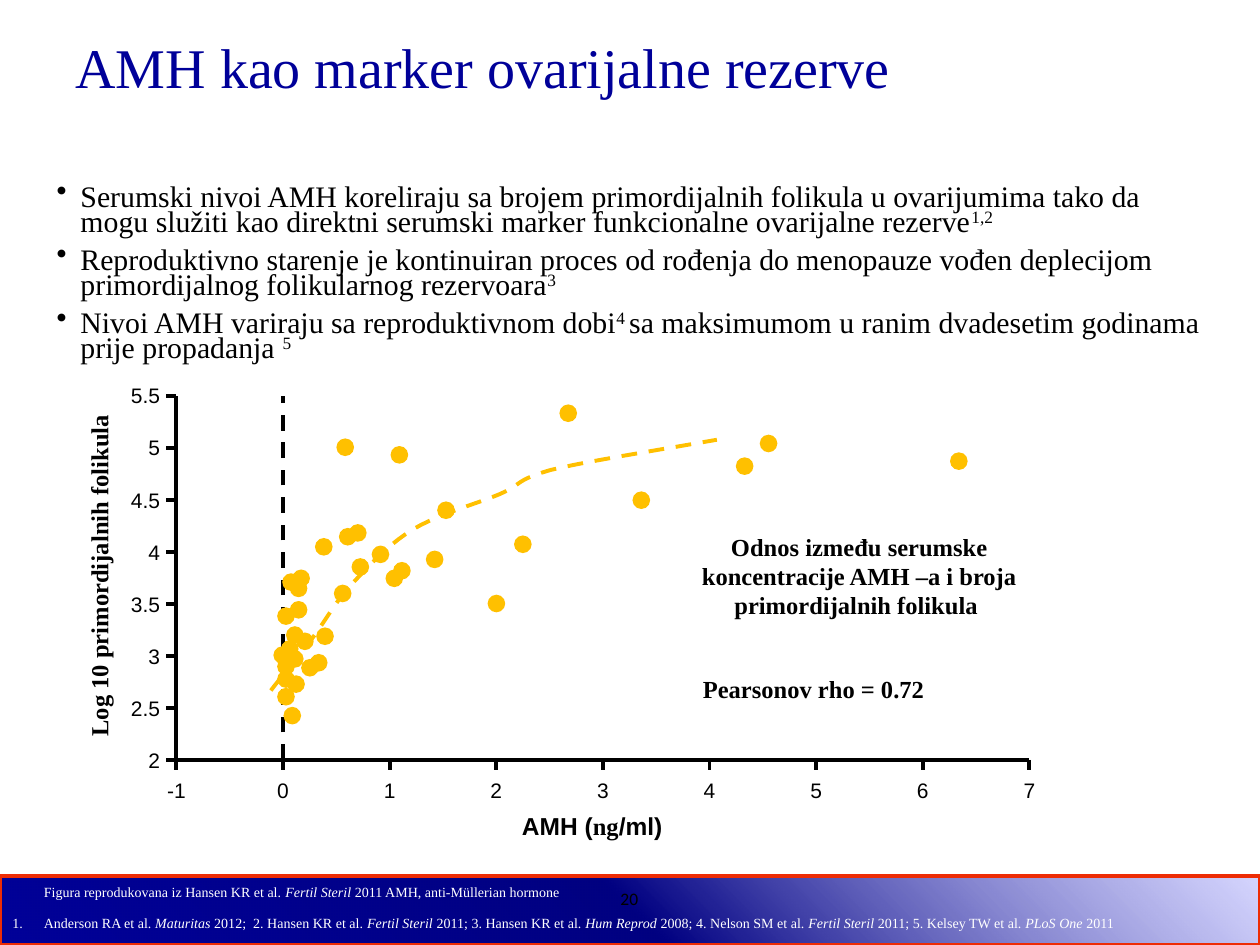
from lxml import etree
from pptx import Presentation
from pptx import util as u
from pptx.dml.color import RGBColor
from pptx.enum import dml, shapes, text
from pptx.oxml import parse_xml
from pptx.oxml.ns import nsdecls, qn

COLORS = {"title": "000099", "ink": "000000", "paper": "FFFFFF", "marker": "FFC000",
          "frame": "ED2C05", "glow": "C4C4FF", "navy": "000081"}
SERIF, SANS = "Times New Roman", "Arial"
LEFT, CENTER, RIGHT = text.PP_ALIGN.LEFT, text.PP_ALIGN.CENTER, text.PP_ALIGN.RIGHT
TOP, MIDDLE, BOTTOM = text.MSO_ANCHOR.TOP, text.MSO_ANCHOR.MIDDLE, text.MSO_ANCHOR.BOTTOM
DEFAULT_INSETS, NO_INSETS, NOTE_INSETS = (0.1, 0.05, 0.1, 0.05), (0, 0, 0, 0), (0.1, 0.05, 0, 0)

AXIS_LEFT, AXIS_BASE, AXIS_TOP = 1.4, 6.03, 3.14
X_STEP, Y_STEP = 6.77 / 8, (AXIS_BASE - AXIS_TOP) / 7
ZERO_X = AXIS_LEFT + X_STEP
TICK, DOT = 0.08, 0.14
LABEL_W, LABEL_H = 0.35, 0.2

FINDINGS = [
    [("Serumski nivoi AMH koreliraju sa brojem primordijalnih folikula u ovarijumima tako da "
      "mogu služiti kao direktni serumski marker funkcionalne ovarijalne rezerve", ""),
     ("1,2", "super")],
    [("Reproduktivno starenje je kontinuiran proces od rođenja do menopauze vođen deplecijom "
      "primordijalnog folikularnog rezervoara", ""), ("3", "super")],
    [("Nivoi AMH variraju sa reproduktivnom dobi", ""), ("4 ", "super"),
     ("sa maksimumom u ranim dvadesetim godinama prije propadanja ", ""), ("5", "super")],
]
FIGURE_CREDIT = [("Figura reprodukovana iz Hansen KR et al. ", ""), ("Fertil Steril ", "italic"),
                 ("2011 AMH, anti-Müllerian hormone", "")]
REFERENCES = [("Anderson RA et al. ", ""), ("Maturitas", "italic"),
              (" 2012;  2. Hansen KR et al. ", ""), ("Fertil Steril ", "italic"),
              ("2011; 3. Hansen KR et al. ", ""), ("Hum Reprod ", "italic"),
              ("2008; 4. Nelson SM et al. ", ""), ("Fertil Steril ", "italic"),
              ("2011; 5. Kelsey TW et al. ", ""), ("PLoS One ", "italic"), ("2011", "")]
PATIENTS = [
    (2.25, 5.61), (2.2, 5.46), (2.28, 5.36), (2.2, 5.32), (2.39, 5.23), (2.46, 5.19),
    (2.2, 5.22), (2.17, 5.13), (2.27, 5.16), (2.23, 5.08), (2.35, 5.02), (2.27, 4.97),
    (2.51, 4.98), (2.2, 4.82), (2.3, 4.77), (2.3, 4.6), (2.24, 4.55), (2.32, 4.52),
    (2.65, 4.64), (3.06, 4.52), (3.12, 4.46), (3.38, 4.37), (3.87, 4.72), (4.08, 4.25),
    (4.44, 3.21), (5.02, 3.9), (5.84, 3.63), (7.54, 3.59), (6.03, 3.45), (2.95, 4.33),
    (2.79, 4.43), (2.5, 4.27), (2.69, 4.19), (2.77, 4.16), (3.47, 3.98), (3.1, 3.54),
    (2.67, 3.48)]
TREND_START = (2.15, 5.48)
TREND_CURVES = [
    ((2.25, 5.35), (2.36, 5.22), (2.46, 5.09)),
    ((2.57, 4.95), (2.64, 4.81), (2.77, 4.66)),
    ((2.91, 4.51), (3.08, 4.32), (3.28, 4.2)),
    ((3.48, 4.08), (3.78, 4), (3.97, 3.92)),
    ((4.15, 3.84), (4.09, 3.81), (4.37, 3.73)),
    ((4.66, 3.66), (5.18, 3.58), (5.69, 3.49))]


def rgb(name):
    return RGBColor.from_string(COLORS[name])


def style_line(line, color, dashed=False):
    line.color.rgb = rgb(color)
    line.width = u.Pt(2.25)
    if dashed:
        line.dash_style = dml.MSO_LINE.DASH


def add_bullet(paragraph, bullet, indent):
    props = paragraph._p.get_or_add_pPr()
    props.set("marL", str(u.Inches(indent)))
    props.set("indent", str(-u.Inches(indent)))
    kind, key, value = (("a:buAutoNum", "type", "arabicPeriod") if bullet == "1."
                        else ("a:buChar", "char", bullet))
    etree.SubElement(props, qn(kind)).set(key, value)


def add_text(slide, box, paragraphs, size, color="ink", font=SERIF, bold=False, align=LEFT,
             anchor=TOP, insets=DEFAULT_INSETS, spacing=None, bullet=None, indent=0):
    label = slide.shapes.add_textbox(*map(u.Inches, box))
    frame = label.text_frame
    frame.word_wrap = True
    frame.vertical_anchor = anchor
    (frame.margin_left, frame.margin_top,
     frame.margin_right, frame.margin_bottom) = map(u.Inches, insets)
    for index, pieces in enumerate(paragraphs):
        paragraph = frame.add_paragraph() if index else frame.paragraphs[0]
        if bullet:
            add_bullet(paragraph, bullet, indent)
        paragraph.alignment = align
        if spacing:
            paragraph.line_spacing = spacing
        if index:
            paragraph.space_before = u.Pt(7.5)
        for words, style in pieces:
            run = paragraph.add_run()
            run.text = words
            run.font.size = u.Pt(size)
            run.font.name = SERIF if style == "serif" else font
            run.font.bold = bold
            run.font.italic = style == "italic"
            run.font.color.rgb = rgb(color)
            if style == "super":
                run.font._element.set("baseline", "30000")
    return label


def add_rule(slide, start, end, dashed=False):
    rule = slide.shapes.add_connector(shapes.MSO_CONNECTOR.STRAIGHT,
                                      *map(u.Inches, start + end))
    style_line(rule.line, "ink", dashed)
    etree.SubElement(rule._element.spPr, qn("a:effectLst"))


def add_outline(slide, points, color, dashed=False):
    builder = slide.shapes.build_freeform(*map(u.Inches, points[0]))
    builder.add_line_segments([tuple(map(u.Inches, point)) for point in points[1:]], close=False)
    outline = builder.convert_to_shape()
    outline.fill.background()
    outline.shadow.inherit = False
    style_line(outline.line, color, dashed)


def add_dot(slide, left, top):
    dot = slide.shapes.add_shape(shapes.MSO_SHAPE.OVAL, *map(u.Inches, (left, top, DOT, DOT)))
    dot.fill.solid()
    dot.fill.fore_color.rgb = rgb("marker")
    dot.line.fill.background()
    dot.shadow.inherit = False


def add_footer_band(slide):
    band = slide.shapes.add_shape(shapes.MSO_SHAPE.RECTANGLE,
                                  *map(u.Inches, (0, 6.95, 10, 0.55)))
    band.shadow.inherit = False
    style_line(band.line, "frame")
    gradient = parse_xml(
        f'<a:gradFill {nsdecls("a")} rotWithShape="1"><a:gsLst>'
        f'<a:gs pos="0"><a:srgbClr val="{COLORS["glow"]}"><a:alpha val="68000"/></a:srgbClr></a:gs>'
        f'<a:gs pos="50000"><a:srgbClr val="{COLORS["navy"]}"/></a:gs>'
        f'<a:gs pos="100000"><a:srgbClr val="{COLORS["title"]}"/></a:gs>'
        '</a:gsLst><a:lin ang="8100000" scaled="0"/></a:gradFill>')
    band._element.spPr.find(qn("a:prstGeom")).addnext(gradient)


def trend_points(steps=10):
    points = [TREND_START]
    for curve in TREND_CURVES:
        corners = (points[-1],) + curve
        for step in range(1, steps + 1):
            t = step / steps
            weights = ((1 - t) ** 3, 3 * t * (1 - t) ** 2, 3 * t ** 2 * (1 - t), t ** 3)
            points.append(tuple(sum(w * corner[axis] for w, corner in zip(weights, corners))
                                for axis in (0, 1)))
    return points


def add_axes(slide):
    add_rule(slide, (ZERO_X, AXIS_BASE), (ZERO_X, AXIS_TOP), dashed=True)
    for index in range(9):
        x = AXIS_LEFT + index * X_STEP
        add_rule(slide, (x, AXIS_BASE), (x, AXIS_BASE + TICK))
        add_text(slide, (x - LABEL_W / 2, 6.17, LABEL_W, LABEL_H), [[(str(index - 1), "")]], 12,
                 font=SANS, align=CENTER, insets=NO_INSETS)
    for index in range(8):
        y = AXIS_BASE - index * Y_STEP
        add_rule(slide, (AXIS_LEFT, y), (AXIS_LEFT - TICK, y))
        add_text(slide, (0.92, y - LABEL_H / 2, LABEL_W, LABEL_H),
                 [[(f"{2 + index / 2:g}", "")]], 12,
                 font=SANS, align=RIGHT, anchor=MIDDLE, insets=NO_INSETS)
    add_outline(slide, [(AXIS_LEFT + 8 * X_STEP, AXIS_BASE), (AXIS_LEFT, AXIS_BASE),
                        (AXIS_LEFT, AXIS_TOP)], "ink")
    follicle_title = add_text(slide, (-0.7, 4.42, 2.9, 0.3),
                              [[("Log 10 primordijalnih folikula", "")]], 14, bold=True,
                              align=CENTER, anchor=BOTTOM, insets=NO_INSETS)
    follicle_title.rotation = 270
    add_text(slide, (3.38, 6.44, 2.64, 0.24), [[("AMH (", ""), ("ng", "serif"), ("/ml)", "")]],
             14, font=SANS, bold=True, align=CENTER, insets=NO_INSETS)


def main():
    deck = Presentation()
    deck.slide_width, deck.slide_height = u.Inches(10), u.Inches(7.5)
    slide = deck.slides.add_slide(deck.slide_layouts[6])
    add_footer_band(slide)
    add_text(slide, (4.68, 7, 0.63, 0.22), [[("20", "")]], 10, font="Calibri", align=CENTER,
             insets=(0.1, 0.05, 0.1, 0))
    add_text(slide, (0.5, 0.3, 9.38, 0.51), [[("AMH kao marker ovarijalne rezerve", "")]], 32,
             color="title", anchor=MIDDLE, spacing=0.9)
    add_text(slide, (0.35, 1.44, 9.29, 1.6), FINDINGS, 17, spacing=0.7, bullet="•", indent=0.19)
    add_text(slide, (0.25, 6.56, 5.21, 0.59), [FIGURE_CREDIT], 8, color="paper", anchor=BOTTOM,
             insets=NOTE_INSETS, spacing=0.9)
    add_text(slide, (0, 6.76, 9.87, 0.63), [REFERENCES], 8, color="paper", anchor=BOTTOM,
             insets=NOTE_INSETS, spacing=0.9, bullet="1.", indent=0.25)
    add_text(slide, (5.31, 4.17, 3.02, 0.81),
             [[("Odnos između serumske koncentracije AMH –a i broja primordijalnih folikula ", "")]],
             14, bold=True, align=CENTER)
    add_axes(slide)
    for left, top in PATIENTS:
        add_dot(slide, left, top)
    add_outline(slide, trend_points(), "marker", dashed=True)
    add_text(slide, (5.48, 5.3, 2.88, 0.34), [[("Pearsonov rho = 0.72", "")]], 14, bold=True)
    deck.save("out.pptx")


if __name__ == "__main__":
    main()
